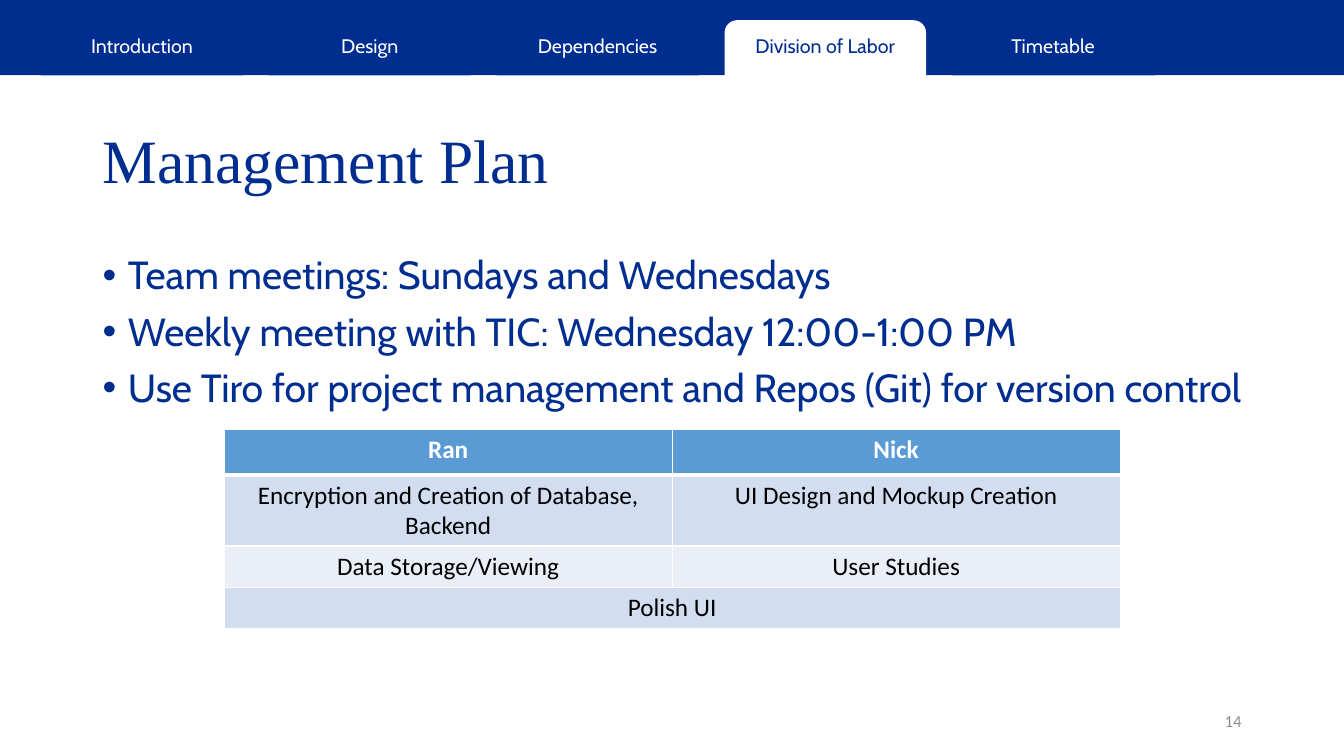
from lxml import etree
from pptx import Presentation
from pptx.dml.color import RGBColor
from pptx.enum.shapes import MSO_SHAPE
from pptx.enum.text import MSO_ANCHOR, MSO_AUTO_SIZE, PP_ALIGN
from pptx.oxml.ns import qn
from pptx.util import Cm, Pt

RECT, ROUNDED = MSO_SHAPE.RECTANGLE, MSO_SHAPE.ROUNDED_RECTANGLE
LEFT, CENTER, RIGHT = PP_ALIGN.LEFT, PP_ALIGN.CENTER, PP_ALIGN.RIGHT
TOP, MIDDLE = MSO_ANCHOR.TOP, MSO_ANCHOR.MIDDLE
NO_FIT = MSO_AUTO_SIZE.NONE

COLORS = {
    "navy": "002D90", "white": "FFFFFF", "black": "000000", "gray": "8C8C8C",
    "header": "5B9BD5", "band_dark": "D2DEEF", "band_light": "EAEFF7",
}
TABS = ["Introduction", "Design", "Dependencies", "Division of Labor", "Timetable"]
ACTIVE_TAB = "Division of Labor"
BULLETS = [
    "Team meetings: Sundays and Wednesdays",
    "Weekly meeting with TIC: Wednesday 12:00-1:00 PM",
    "Use Tiro for project management and Repos (Git) for version control",
]
DUTIES = [
    ["Ran", "Nick"],
    ["Encryption and Creation of Database, Backend", "UI Design and Mockup Creation"],
    ["Data Storage/Viewing", "User Studies"],
    ["Polish UI"],
]
ROW_HEIGHTS = [1.14, 1.79, 1.04, 1.04]
ROW_FILLS = ["header", "band_dark", "band_light", "band_dark"]


def rgb(name):
    """Return the named colour."""
    return RGBColor.from_string(COLORS[name])


def add_run(p, text, font, size, color, bold=False):
    """Add one formatted run to a paragraph."""
    r = p.add_run()
    r.text = text
    r.font.name, r.font.size, r.font.bold = font, Pt(size), bold
    r.font.color.rgb = rgb(color)


def place(sp, x, y, w, h):
    """Move a shape to a box given in centimetres."""
    sp.left, sp.top, sp.width, sp.height = Cm(x), Cm(y), Cm(w), Cm(h)


def add_panel(slide, shape_type, x, y, w, h, fill):
    """Add a shape without outline or shadow."""
    sp = slide.shapes.add_shape(shape_type, Cm(x), Cm(y), Cm(w), Cm(h))
    sp.shadow.inherit = False
    sp.fill.solid()
    sp.fill.fore_color.rgb = rgb(fill)
    sp.line.fill.background()
    return sp


def add_navigation(slide, x, y, w, h):
    """Draw the navigation bar, its tabs and the page below it."""
    add_panel(slide, RECT, x, y, w, h, "navy")
    for i, label in enumerate(TABS):
        fill, ink = ("white", "navy") if label == ACTIVE_TAB else ("navy", "white")
        tab = add_panel(slide, ROUNDED, x + 1.04 + 5.74 * i, y + 0.51, 5.08, 1.9, fill)
        tf = tab.text_frame
        tf.margin_top = Cm(0.25)
        tf.vertical_anchor = TOP
        p = tf.paragraphs[0]
        p.alignment = CENTER
        add_run(p, label, "Cabin", 14, ink)
    add_panel(slide, RECT, x, y + h, w, 19.05 - h, "white")


def fill_title(slide, text, x, y, w, h):
    """Place and fill the title placeholder above the panels."""
    title = slide.shapes.title
    title.element.getparent().append(title.element)
    place(title, x, y, w, h)
    tf = title.text_frame
    tf.auto_size, tf.vertical_anchor = NO_FIT, MIDDLE
    p = tf.paragraphs[0]
    p.alignment, p.line_spacing = LEFT, 0.9
    add_run(p, text, "Times New Roman", 44, "navy")


def fill_body(slide, x, y, w, h):
    """Place and fill the bulleted body placeholder."""
    body = slide.placeholders[1]
    body.element.getparent().append(body.element)
    place(body, x, y, w, h)
    tf = body.text_frame
    tf.auto_size, tf.vertical_anchor = NO_FIT, TOP
    for i, text in enumerate(BULLETS):
        p = tf.add_paragraph() if i else tf.paragraphs[0]
        pPr = p._p.get_or_add_pPr()
        pPr.set("marL", str(Cm(0.64)))
        pPr.set("indent", str(Cm(-0.64)))
        etree.SubElement(pPr, qn("a:buChar")).set("char", "•")
        p.alignment, p.line_spacing = LEFT, 0.9
        p.space_before = Pt(10 if i else 0)
        add_run(p, text, "Cabin", 28, "navy")


def set_borders(cell, top, bottom):
    """Give a cell white borders of the given point widths."""
    tcPr = cell._tc.get_or_add_tcPr()
    for side, width in (("L", 1), ("R", 1), ("T", top), ("B", bottom)):
        ln = etree.SubElement(tcPr, qn(f"a:ln{side}"), w=str(Pt(width)))
        fill = etree.SubElement(ln, qn("a:solidFill"))
        etree.SubElement(fill, qn("a:srgbClr"), val=COLORS["white"])


def add_duties(slide, x, y, w):
    """Add the table that divides the labor."""
    frame = slide.shapes.add_table(len(DUTIES), 2, Cm(x), Cm(y), Cm(w), Cm(sum(ROW_HEIGHTS)))
    table = frame.table
    for col in table.columns:
        col.width = Cm(w / 2)
    for i, texts in enumerate(DUTIES):
        table.rows[i].height = Cm(ROW_HEIGHTS[i])
        for j in range(2):
            cell = table.cell(i, j)
            set_borders(cell, 3 if i == 1 else 1, 3 if i == 0 else 1)
            cell.fill.solid()
            cell.fill.fore_color.rgb = rgb(ROW_FILLS[i])
        for j, text in enumerate(texts):
            p = table.cell(i, j).text_frame.paragraphs[0]
            p.alignment = CENTER
            add_run(p, text, "Calibri", 18, "black" if i else "white", bold=i == 0)
    last = len(DUTIES) - 1
    table.cell(last, 0).merge(table.cell(last, 1))


def add_page_number(slide, number, x, y, w, h):
    """Add the page number."""
    tf = slide.shapes.add_textbox(Cm(x), Cm(y), Cm(w), Cm(h)).text_frame
    tf.word_wrap, tf.vertical_anchor = True, MIDDLE
    p = tf.paragraphs[0]
    p.alignment = RIGHT
    add_run(p, number, "Calibri", 12, "gray")


def main():
    """Build and save the slide."""
    prs = Presentation()
    prs.slide_width, prs.slide_height = Cm(33.87), Cm(19.05)
    slide = prs.slides.add_slide(prs.slide_layouts[1])
    add_navigation(slide, 0, 0, 33.87, 1.9)
    fill_title(slide, "Management Plan", 2.33, 2.29, 29.21, 3.68)
    fill_body(slide, 2.33, 6.32, 29.21, 10.82)
    add_page_number(slide, "14", 23.92, 17.66, 7.62, 1.01)
    add_duties(slide, 5.65, 10.83, 22.58)
    prs.save("out.pptx")


if __name__ == "__main__":
    main()
